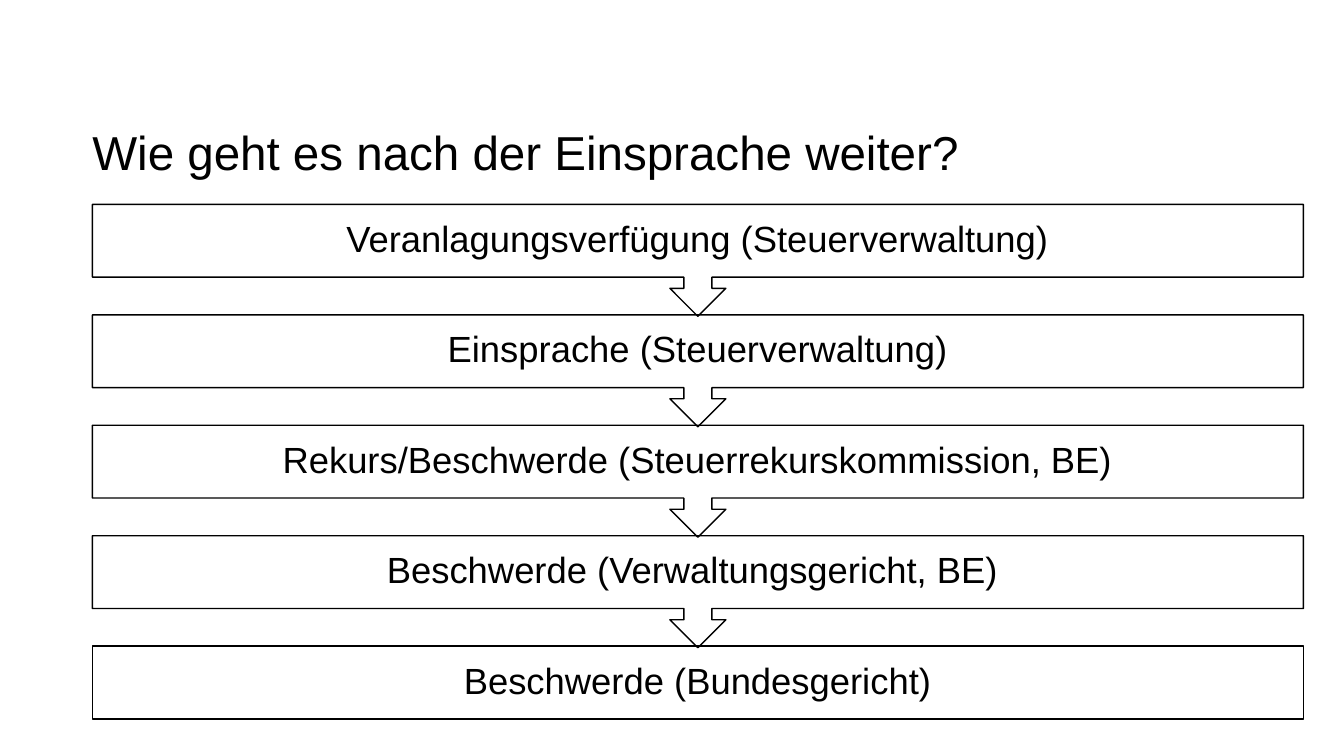
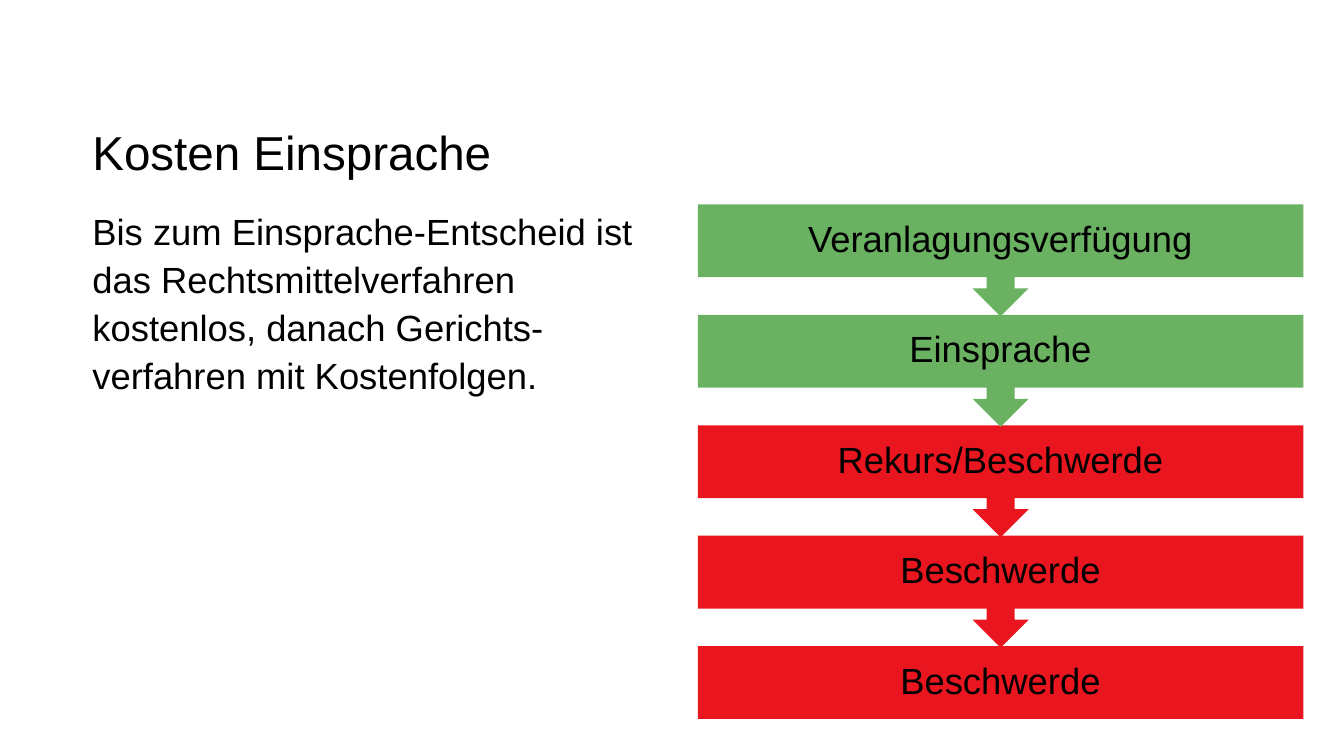
from dataclasses import dataclass
from typing import Optional

from pptx import Presentation
from pptx.dml.color import RGBColor
from pptx.enum import shapes, text
from pptx.util import Pt

FONT = "Arial"
BLACK, GREEN, RED = "000000", "6AB261", "EA161F"
TITLE_SIZE, BODY_SIZE = 34, 26
LEFT, RIGHT, MIDDLE = 66, 931, 498.5
TITLE_TOP, TITLE_HEIGHT = 84, 49
CONTENT_TOP, CONTENT_HEIGHT = 146, 368
STEP_PITCH, STEP_HEIGHT, CALLOUT_HEIGHT = 78.9, 52, 80
STEP_MARGIN = 14.4


@dataclass
class Step:
    label: str
    fill: Optional[str] = None


APPEAL_STEPS = [
    Step("Veranlagungsverfügung (Steuerverwaltung)"),
    Step("Einsprache (Steuerverwaltung)"),
    Step("Rekurs/Beschwerde (Steuerrekurskommission, BE)"),
    Step("Beschwerde (Verwaltungsgericht, BE) "),
    Step("Beschwerde (Bundesgericht)"),
]
COST_STEPS = [
    Step("Veranlagungsverfügung", GREEN),
    Step("Einsprache", GREEN),
    Step("Rekurs/Beschwerde", RED),
    Step("Beschwerde", RED),
    Step("Beschwerde", RED),
]
COST_NOTE = (
    "Bis zum Einsprache-Entscheid ist das Rechtsmittelverfahren "
    "kostenlos, danach Gerichts-\vverfahren mit Kostenfolgen."
)


def color(value: str) -> RGBColor:
    return RGBColor.from_string(value)


def write(frame, content: str, size: float, spacing: float, side_margin: float = 0) -> None:
    """Fill a text frame with one paragraph in the deck's font."""
    frame.word_wrap = True
    frame.margin_left = frame.margin_right = Pt(side_margin)
    frame.margin_top = frame.margin_bottom = 0
    frame.text = content
    paragraph = frame.paragraphs[0]
    paragraph.line_spacing = spacing
    for run in paragraph.runs:
        run.font.name = FONT
        run.font.size = Pt(size)
        run.font.color.rgb = color(BLACK)


def add_text(slide, content: str, top: float, width: float, height: float, size: float) -> None:
    box = slide.shapes.add_textbox(Pt(LEFT), Pt(top), Pt(width), Pt(height))
    write(box.text_frame, content, size, 1.1)


def add_step(slide, step: Step, left: float, top: float, is_last: bool) -> None:
    preset = shapes.MSO_SHAPE.RECTANGLE if is_last else shapes.MSO_SHAPE.DOWN_ARROW_CALLOUT
    height = STEP_HEIGHT if is_last else CALLOUT_HEIGHT
    box = slide.shapes.add_shape(preset, Pt(left), Pt(top), Pt(RIGHT - left), Pt(height))
    box.shadow.inherit = False
    if not is_last:
        box.adjustments[3] = STEP_HEIGHT / CALLOUT_HEIGHT
    if step.fill:
        box.fill.solid()
        box.fill.fore_color.rgb = color(step.fill)
        box.line.fill.background()
    else:
        box.fill.background()
        box.line.color.rgb = color(BLACK)
        box.line.width = Pt(1)
    frame = box.text_frame
    write(frame, step.label, BODY_SIZE, 0.9, STEP_MARGIN)
    frame.vertical_anchor = text.MSO_ANCHOR.MIDDLE
    frame.paragraphs[0].alignment = text.PP_ALIGN.CENTER


def add_flow(slide, steps: list[Step], left: float) -> None:
    """Stack the steps from the bottom up, so each arrow tip lies over the next box."""
    last = len(steps) - 1
    for row, step in reversed(list(enumerate(steps))):
        add_step(slide, step, left, CONTENT_TOP + row * STEP_PITCH, row == last)


def add_titled_slide(deck, title: str):
    slide = deck.slides.add_slide(deck.slide_layouts[6])
    add_text(slide, title, TITLE_TOP, RIGHT - LEFT, TITLE_HEIGHT, TITLE_SIZE)
    return slide


def main() -> None:
    deck = Presentation()
    deck.slide_width, deck.slide_height = Pt(960), Pt(540)

    appeal = add_titled_slide(deck, "Wie geht es nach der Einsprache weiter?")
    add_flow(appeal, APPEAL_STEPS, LEFT)

    costs = add_titled_slide(deck, "Kosten Einsprache")
    add_text(costs, COST_NOTE, CONTENT_TOP, 420, CONTENT_HEIGHT, BODY_SIZE)
    add_flow(costs, COST_STEPS, MIDDLE)

    deck.save("out.pptx")


if __name__ == "__main__":
    main()
